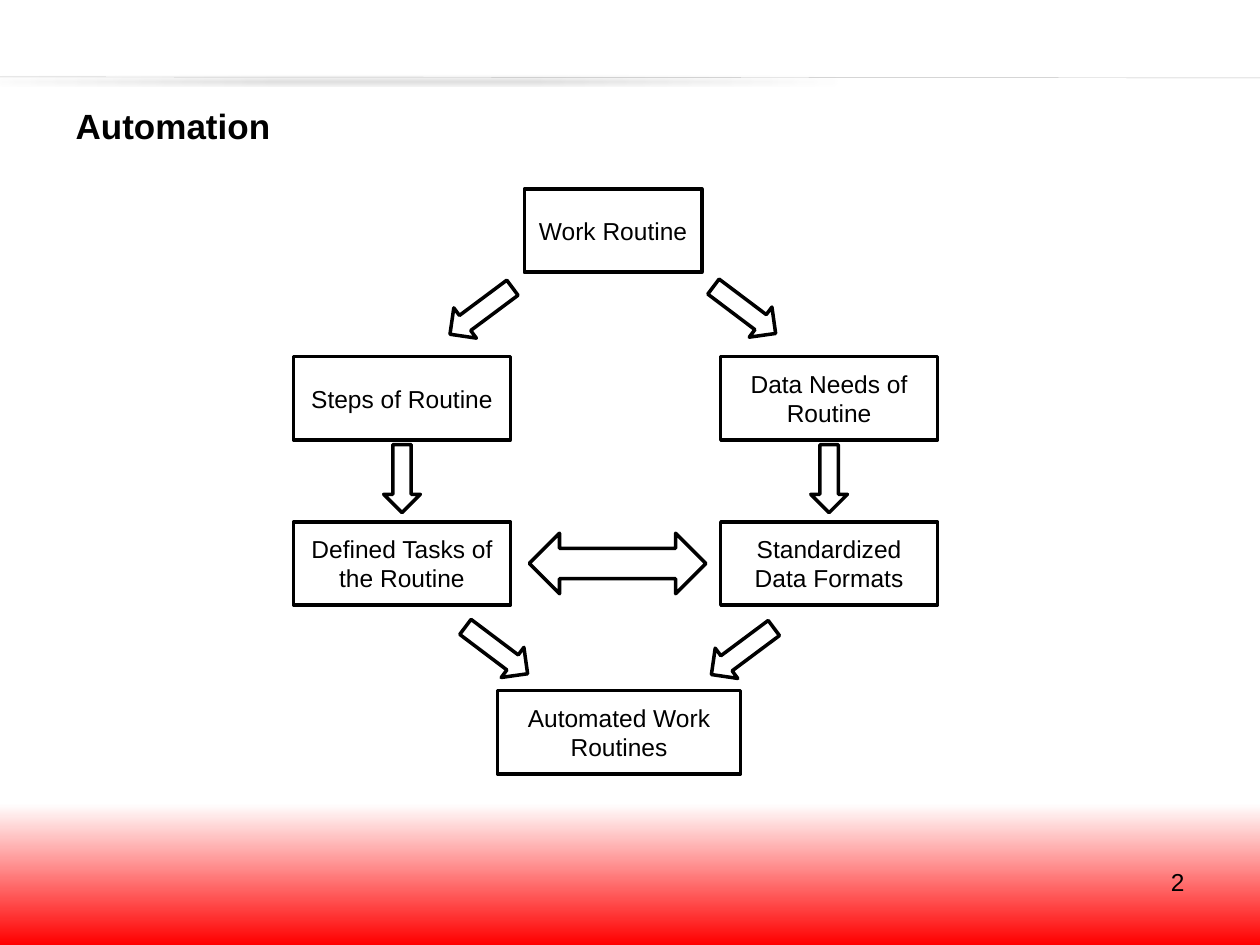
import copy

import lxml.etree
import pptx
import pptx.dml.color
import pptx.enum.shapes
import pptx.enum.text
import pptx.oxml
import pptx.oxml.ns
import pptx.util

Cm = pptx.util.Cm
Pt = pptx.util.Pt
RGBColor = pptx.dml.color.RGBColor
SHAPE = pptx.enum.shapes.MSO_SHAPE
ALIGN = pptx.enum.text.PP_ALIGN
ANCHOR = pptx.enum.text.MSO_ANCHOR
qn = pptx.oxml.ns.qn

BLACK = RGBColor(0x00, 0x00, 0x00)
WHITE = RGBColor(0xFF, 0xFF, 0xFF)
RED = RGBColor(0xFF, 0x00, 0x00)
GREY = RGBColor(0xBF, 0xBF, 0xBF)

BOX_HEIGHT = 1.68
COLUMN_WIDTH = 4.37
COLUMN_LEFTS = (5.92, 14.53)
ROW_TOPS = (7.19, 10.52)

RULE_SHADOW = (
    f'<a:effectLst {pptx.oxml.ns.nsdecls("a")}>'
    '<a:outerShdw blurRad="39370" dist="20320" dir="5400000" rotWithShape="0">'
    '<a:srgbClr val="000000"><a:alpha val="38000"/></a:srgbClr>'
    '</a:outerShdw></a:effectLst>'
)


class Diagram:
    font = "Arial"
    text_size = 14
    line_width = 2

    def __init__(self, page):
        self.page = page

    def set_text(self, frame, text, align, anchor, size=text_size, bold=False):
        frame.text = text
        frame.word_wrap = True
        frame.vertical_anchor = anchor
        paragraph = frame.paragraphs[0]
        paragraph.alignment = align
        for span in paragraph.runs:
            span.font.name = self.font
            span.font.size = Pt(size)
            span.font.bold = bold
            span.font.color.rgb = BLACK

    def background(self):
        """Red at the bottom edge, fading to white 15 % of the way up."""
        fill = self.page.background.fill
        fill.gradient()
        fill.gradient_angle = 90
        first, last = fill.gradient_stops
        first.color.rgb, first.position = RED, 0
        last.color.rgb, last.position = WHITE, 1
        stops = next(self.page.element.iter(qn("a:gsLst")))
        middle = copy.deepcopy(stops[1])
        middle.set("pos", "15000")
        stops.insert(1, middle)

    def rule(self, top):
        line = self.page.shapes.add_connector(
            pptx.enum.shapes.MSO_CONNECTOR.STRAIGHT,
            Cm(0), Cm(top), Cm(25.4), Cm(top + 0.02))
        line.line.color.rgb = GREY
        line.line.width = Pt(0.25)
        line._element.spPr.append(lxml.etree.fromstring(RULE_SHADOW))

    def title(self, text, left, top, width, height):
        title = self.page.shapes.title
        title.left, title.top = Cm(left), Cm(top)
        title.width, title.height = Cm(width), Cm(height)
        self.set_text(title.text_frame, text, ALIGN.LEFT, ANCHOR.MIDDLE, 20, True)

    def page_number(self, text, left, top, width, height):
        box = self.page.shapes.add_textbox(Cm(left), Cm(top), Cm(width), Cm(height))
        self.set_text(box.text_frame, text, ALIGN.RIGHT, ANCHOR.TOP)

    def outlined(self, kind, left, top, width, height):
        shape = self.page.shapes.add_shape(
            kind, Cm(left), Cm(top), Cm(width), Cm(height))
        shape.shadow.inherit = False
        shape.fill.solid()
        shape.fill.fore_color.rgb = WHITE
        shape.line.color.rgb = BLACK
        shape.line.width = Pt(self.line_width)
        return shape

    def box(self, text, left, top, width=COLUMN_WIDTH):
        shape = self.outlined(SHAPE.RECTANGLE, left, top, width, BOX_HEIGHT)
        self.set_text(shape.text_frame, text, ALIGN.CENTER, ANCHOR.MIDDLE)

    def arrow(self, kind, center_x, center_y, width, height, rotation=0):
        shape = self.outlined(
            kind, center_x - width / 2, center_y - height / 2, width, height)
        shape.rotation = rotation


def main():
    deck = pptx.Presentation()
    deck.slide_width, deck.slide_height = Cm(25.4), Cm(19.05)
    diagram = Diagram(deck.slides.add_slide(deck.slide_layouts[5]))

    diagram.background()
    diagram.rule(1.55)
    diagram.title("Automation", 1.27, 1.7, 19.81, 1.68)
    diagram.page_number("2", 18.21, 17.35, 5.92, 1.32)

    diagram.box("Work Routine", 10.57, 3.81, 3.58)
    columns = (
        ("Steps of Routine", "Defined Tasks of the Routine"),
        ("Data Needs of Routine", "Standardized Data Formats"),
    )
    for left, labels in zip(COLUMN_LEFTS, columns):
        for top, label in zip(ROW_TOPS, labels):
            diagram.box(label, left, top)
        diagram.arrow(SHAPE.DOWN_ARROW, left + COLUMN_WIDTH / 2, 9.65, 0.74, 1.37)
    diagram.box("Automated Work Routines", 10.03, 13.92, 4.9)

    diagram.arrow(SHAPE.LEFT_RIGHT_ARROW, 12.45, ROW_TOPS[1] + BOX_HEIGHT / 2, 3.56, 1.22)
    to_left, to_right = 53.3, 307
    for center_x, center_y, rotation in (
        (9.7, 6.27, to_left), (15.01, 6.25, to_right),
        (10.01, 13.11, to_right), (14.97, 13.13, to_left),
    ):
        diagram.arrow(SHAPE.DOWN_ARROW, center_x, center_y, 0.76, 1.57, rotation)

    deck.save("out.pptx")


if __name__ == "__main__":
    main()
